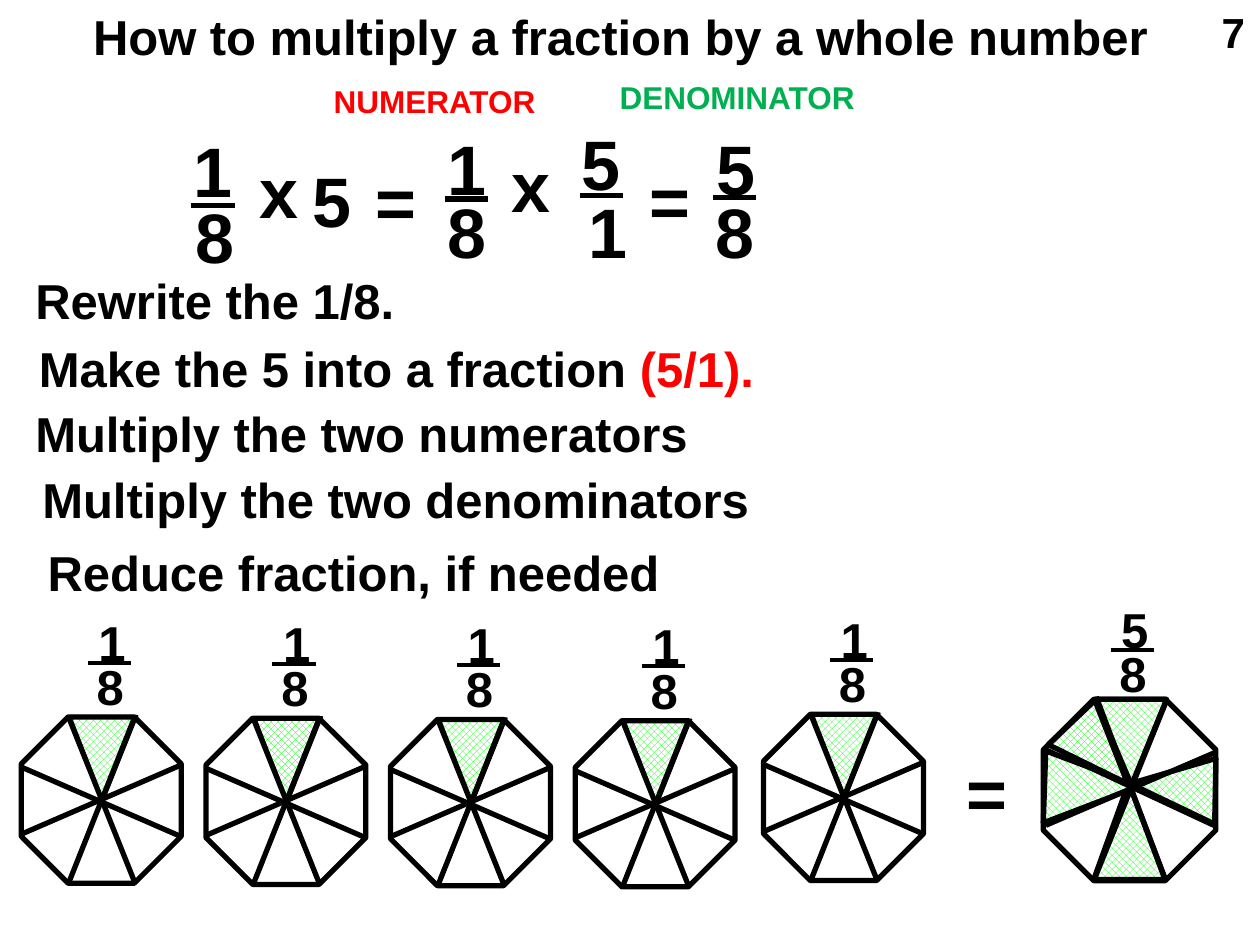
from lxml import etree
from pptx import Presentation
from pptx.dml.color import RGBColor
from pptx.enum.dml import MSO_PATTERN
from pptx.enum.shapes import MSO_CONNECTOR, MSO_SHAPE
from pptx.enum.text import MSO_ANCHOR, MSO_AUTO_SIZE, PP_ALIGN
from pptx.oxml.ns import qn
from pptx.util import Pt

CHECKER = MSO_PATTERN.LARGE_CHECKER_BOARD
STRAIGHT = MSO_CONNECTOR.STRAIGHT
OCTAGON = MSO_SHAPE.OCTAGON
TOP = MSO_ANCHOR.TOP
FIT_SHAPE, FIT_NONE = MSO_AUTO_SIZE.SHAPE_TO_FIT_TEXT, MSO_AUTO_SIZE.NONE
LEFT = PP_ALIGN.LEFT

COLORS = {"black": "000000", "white": "FFFFFF", "red": "FF0000",
          "green": "00B050", "shade": "00FF00"}
BAR_WIDTH = 24.8

# Step text as (words, colour) runs, with its indent and the space before it
STEPS = [
    ([("Rewrite the 1/8.", "black")], 0, 0),
    ([("Make the 5 into a fraction ", "black"), ("(5/1).", "red")], 2, 5.2),
    ([("Multiply the two numerators", "black")], 0, 3.1),
    ([("Multiply the two denominators", "black")], 4, 4.5),
    ([("Reduce fraction, if needed", "black")], 7, 8.2),
]

# Numerator, its place, denominator, its place, start of the bar
EQUATION_FRACTIONS = [
    ("1", (103.7, 69.1), "8", (104.4, 107.3), (109.4, 117.4)),
    ("1", (248.4, 68.4), "8", (248.4, 104.4), (254.2, 113.8)),
    ("5", (325.4, 65.5), "1", (329, 104.4), (331.2, 111.6)),
    ("5", (402.5, 68.4), "8", (401.8, 104.4), (407.5, 113)),
]

# Symbols of size 40: text, left, top, width
SYMBOLS = [("x", 141.1, 81.4, 55.4), ("5", 171.4, 86.4, 53.3),
           ("=", 207.4, 87.1, 31), ("x", 285.1, 77.8, 55.4),
           ("=", 364.3, 86.4, 31), ("=", 545, 424.8, 31)]

# Geometry of the octagons, measured from their top left corner
PART_SIZE = (91.4, 95)
PART_WEDGES = [[(28, -0.7), (66.4, -0.7), (46.9, 48.2)]]
PART_SPOKES = [((0, 67), (91.4, 27.4), 3), ((64.8, 0), (27, 95), 3),
               ((0.4, 28.8), (91.4, 68.4), 3), ((27, 0), (65, 95), 3)]
TOTAL_SIZE = (98.6, 103.7)
TOTAL_WEDGES = [
    [(29.5, 0), (70.5, 0), (50.4, 49)],
    [(28.8, 103), (69.8, 103), (48.9, 47.5)],
    [(0, 70.6), (1.4, 29.5), (54.7, 49.7)],
    [(98.6, 33.8), (97.9, 71.3), (49.6, 48.2)],
    [(2.8, 25.9), (29.5, 0.7), (48.2, 48.2)],
]
TOTAL_SPOKES = [((69.8, 2.2), (28.8, 103.7), 3), ((30.2, -1.4), (69.8, 103.7), 3),
                ((1.4, 72), (98.6, 30.2), 3), ((1.4, 28.1), (98.6, 73.4), 1.5)]


def rgb(color):
    return RGBColor.from_string(COLORS[color])


def apply_format(target, values):
    for name, value in values.items():
        setattr(target, name, value)


def add_run(paragraph, words, size, color="black"):
    run = paragraph.add_run()
    run.text = words
    apply_format(run.font, {"name": "Arial", "size": Pt(size), "bold": True})
    run.font.color.rgb = rgb(color)


def add_text(slide, words, left, top, width, size, color="black", wrap=True):
    box = slide.shapes.add_textbox(Pt(left), Pt(top), Pt(width), Pt(size * 1.2 + 7.2))
    apply_format(box.text_frame, {"word_wrap": wrap, "auto_size": FIT_SHAPE})
    add_run(box.text_frame.paragraphs[0], words, size, color)


def place_placeholder(shape, left, top, width, height):
    apply_format(shape, {"left": Pt(left), "top": Pt(top),
                         "width": Pt(width), "height": Pt(height)})
    apply_format(shape.text_frame, {"vertical_anchor": TOP, "auto_size": FIT_NONE,
                                    "word_wrap": True})
    return shape.text_frame


def add_title(slide, words):
    frame = place_placeholder(slide.shapes.title, 46, 0, 645, 40.3)
    frame.paragraphs[0].alignment = LEFT
    add_run(frame.paragraphs[0], words, 28)


def add_steps(slide):
    frame = place_placeholder(slide.placeholders[1], 13, 151.2, 463, 190)
    for index, (runs, indent, space) in enumerate(STEPS):
        paragraph = frame.add_paragraph() if index else frame.paragraphs[0]
        apply_format(paragraph, {"alignment": LEFT, "line_spacing": 1.0,
                                 "space_before": Pt(space), "space_after": Pt(0)})
        properties = paragraph._p.get_or_add_pPr()
        properties.set("marL", str(Pt(indent)))
        properties.set("indent", "0")
        etree.SubElement(properties, qn("a:buNone"))
        for words, color in runs:
            add_run(paragraph, words, 28, color)


def format_line(shape, width):
    shape.line.color.rgb = rgb("black")
    shape.line.width = Pt(width)


def add_line(shapes, start, end, width):
    line = shapes.add_connector(STRAIGHT, *(Pt(value) for value in (*start, *end)))
    format_line(line, width)
    etree.SubElement(line._element.spPr, qn("a:effectLst"))


def add_fraction(slide, numerator, upper, denominator, lower, bar, size, line_width):
    add_text(slide, numerator, *upper, 31, size)
    add_line(slide.shapes, bar, (bar[0] + BAR_WIDTH, bar[1]), line_width)
    add_text(slide, denominator, *lower, 31, size)


def add_small_fraction(slide, numerator, left, top):
    add_fraction(slide, numerator, (left, top), "8", (left - 1, top + 25.2),
                 (left + 1, top + 32.4), 28, 2.25)


def add_wedge(shapes, points):
    corners = [(Pt(x), Pt(y)) for x, y in points]
    builder = shapes.build_freeform(*corners[0], scale=1.0)
    builder.add_line_segments(corners[1:], close=True)
    wedge = builder.convert_to_shape()
    wedge.shadow.inherit = False
    wedge.fill.patterned()
    wedge.fill.pattern = CHECKER
    wedge.fill.fore_color.rgb = rgb("shade")
    wedge.fill.back_color.rgb = rgb("white")
    return wedge


def add_octagon(slide, left, top, size, wedges, spokes, wedge_line):
    shapes = slide.shapes.add_group_shape().shapes

    def place(point):
        return left + point[0], top + point[1]

    for points in wedges:
        format_line(add_wedge(shapes, [place(point) for point in points]), wedge_line)
    outline = shapes.add_shape(OCTAGON, Pt(left), Pt(top), Pt(size[0]), Pt(size[1]))
    outline.shadow.inherit = False
    outline.fill.background()
    format_line(outline, 3)
    for start, end, width in spokes:
        add_line(shapes, place(start), place(end), width)


def main():
    presentation = Presentation()
    apply_format(presentation, {"slide_width": Pt(720), "slide_height": Pt(540)})
    slide = presentation.slides.add_slide(presentation.slide_layouts[1])

    # Heading, page number and labels
    add_title(slide, "How to multiply a fraction by a whole number")
    add_text(slide, "7", 691, 0, 29, 24)
    add_text(slide, "NUMERATOR", 183.6, 43.2, 130.3, 18, "red", wrap=False)
    add_text(slide, "DENOMINATOR", 347, 41, 149, 18, "green", wrap=False)

    # Equation and steps
    for fraction in EQUATION_FRACTIONS:
        add_fraction(slide, *fraction, 40, 3)
    for words, left, top, width in SYMBOLS:
        add_text(slide, words, left, top, width, 40)
    add_steps(slide)

    # Five single eighths, the last one set apart from the even row
    corners = [(12.2 + 105.5 * index, 409.7 + 0.7 * index) for index in range(4)]
    for left, top in corners + [(436.3, 408.2)]:
        add_small_fraction(slide, "1", left + 37, top - 63.4)
        add_octagon(slide, left, top, PART_SIZE, PART_WEDGES, PART_SPOKES, 1)

    # Their total
    add_small_fraction(slide, "5", 633.6, 339.1)
    add_octagon(slide, 596.2, 399.6, TOTAL_SIZE, TOTAL_WEDGES, TOTAL_SPOKES, 3)

    presentation.save("out.pptx")


if __name__ == "__main__":
    main()
